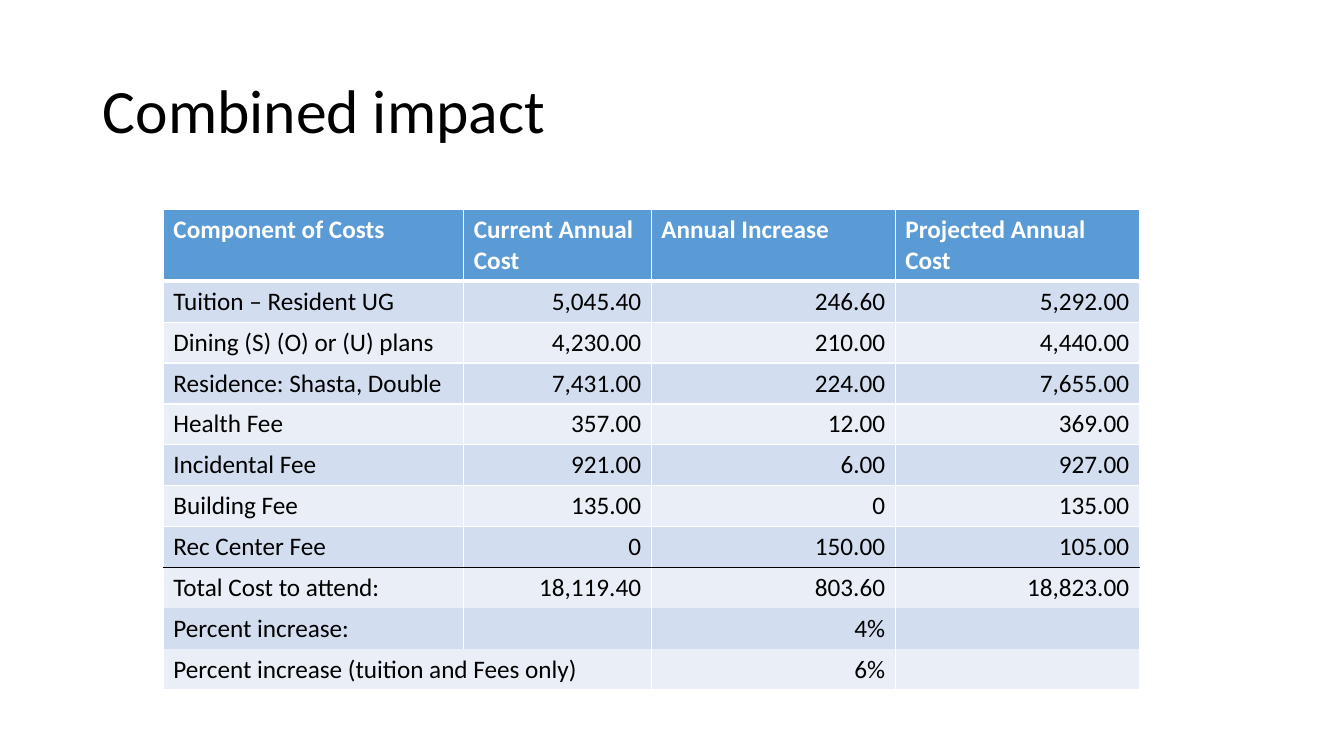
"""Build the slide that shows the combined impact of cost increases."""
from lxml import etree
from pptx import Presentation
from pptx.dml.color import RGBColor
from pptx.enum.text import MSO_ANCHOR, PP_ALIGN
from pptx.oxml.ns import qn
from pptx.util import Pt

LEFT, RIGHT = PP_ALIGN.LEFT, PP_ALIGN.RIGHT
MIDDLE = MSO_ANCHOR.MIDDLE
EMU_PER_PX = 9144
EMU_PER_POINT = 12700
FONT = "Calibri"
BLACK, WHITE = "000000", "FFFFFF"
HEADER_FILL = "5B9BD5"
BAND_FILLS = ["EAEFF7", "D2DEEF"]
COLUMN_WIDTHS = [298, 186, 242, 242]
HEADER_HEIGHT, ROW_HEIGHT = 67, 39
COSTS = [
    ["Component of Costs", "Current Annual Cost", "Annual Increase", "Projected Annual Cost"],
    ["Tuition – Resident UG", "5,045.40", "246.60", "5,292.00"],
    ["Dining (S) (O) or (U) plans", "4,230.00", "210.00", "4,440.00"],
    ["Residence: Shasta, Double", "7,431.00", "224.00", "7,655.00"],
    ["Health Fee", "357.00", "12.00", "369.00"],
    ["Incidental Fee", "921.00", "6.00", "927.00"],
    ["Building Fee", "135.00", "0", "135.00"],
    ["Rec Center Fee", "0", "150.00", "105.00"],
    ["Total Cost to attend:", "18,119.40", "803.60", "18,823.00"],
    ["Percent increase:", "", "4%", ""],
    ["Percent increase (tuition and Fees only)", "", "6%", ""],
]
LAST_ROW = len(COSTS) - 1
TOTAL_ROW = 8
THIN = (WHITE, 1)
RULES = {1: (WHITE, 3), TOTAL_ROW: (BLACK, 1), TOTAL_ROW + 1: None, LAST_ROW: None}


def px(length):
    """Turn pixels into EMU."""
    return length * EMU_PER_PX


def color(value):
    """Turn a hex string into a color."""
    return RGBColor.from_string(value)


def format_text(para, size, text_color, bold=False, align=LEFT):
    """Set the font and alignment of a paragraph."""
    para.alignment = align
    para.font.name = FONT
    para.font.size = Pt(size)
    para.font.bold = bold
    para.font.color.rgb = color(text_color)


def add_border(cell, side, line):
    """Draw one side of a cell, or hide it when there is no line."""
    border = etree.SubElement(cell._tc.get_or_add_tcPr(), qn(f"a:ln{side}"))
    if line is None:
        etree.SubElement(border, qn("a:noFill"))
        return
    line_color, width = line
    border.set("w", str(width * EMU_PER_POINT))
    fill = etree.SubElement(border, qn("a:solidFill"))
    etree.SubElement(fill, qn("a:srgbClr")).set("val", line_color)


def fill_cell(cell, text, row, column):
    """Write and format one cell by its place in the table."""
    lines = {"L": THIN, "R": THIN, "T": RULES.get(row, THIN), "B": RULES.get(row + 1, THIN)}
    for side, line in lines.items():
        add_border(cell, side, line)
    header = row == 0
    cell.fill.solid()
    cell.fill.fore_color.rgb = color(HEADER_FILL if header else BAND_FILLS[row % 2])
    cell.text = text
    align = LEFT if header or column == 0 else RIGHT
    format_text(cell.text_frame.paragraphs[0], 18, WHITE if header else BLACK, header, align)


def add_title(page, text):
    """Place and format the slide title."""
    title = page.shapes.title
    title.left, title.top, title.width, title.height = map(px, (92, 40, 1150, 145))
    title.text_frame.text = text
    title.text_frame.vertical_anchor = MIDDLE
    para = title.text_frame.paragraphs[0]
    para.line_spacing = 0.9
    format_text(para, 44, BLACK)


def add_cost_table(page):
    """Add the table of costs."""
    height = HEADER_HEIGHT + LAST_ROW * ROW_HEIGHT
    frame = page.shapes.add_table(
        len(COSTS), len(COLUMN_WIDTHS), px(162), px(208), px(sum(COLUMN_WIDTHS)), px(height)
    )
    table = frame.table
    for column, width in zip(table.columns, COLUMN_WIDTHS):
        column.width = px(width)
    for row, texts in enumerate(COSTS):
        table.rows[row].height = px(ROW_HEIGHT if row else HEADER_HEIGHT)
        for column, text in enumerate(texts):
            fill_cell(table.cell(row, column), text, row, column)
    table.cell(LAST_ROW, 0).merge(table.cell(LAST_ROW, 1))


def main():
    """Build and save the deck."""
    deck = Presentation()
    deck.slide_width, deck.slide_height = px(1333), px(750)
    page = deck.slides.add_slide(deck.slide_layouts[5])
    add_title(page, "Combined impact")
    add_cost_table(page)
    deck.save("out.pptx")


if __name__ == "__main__":
    main()
